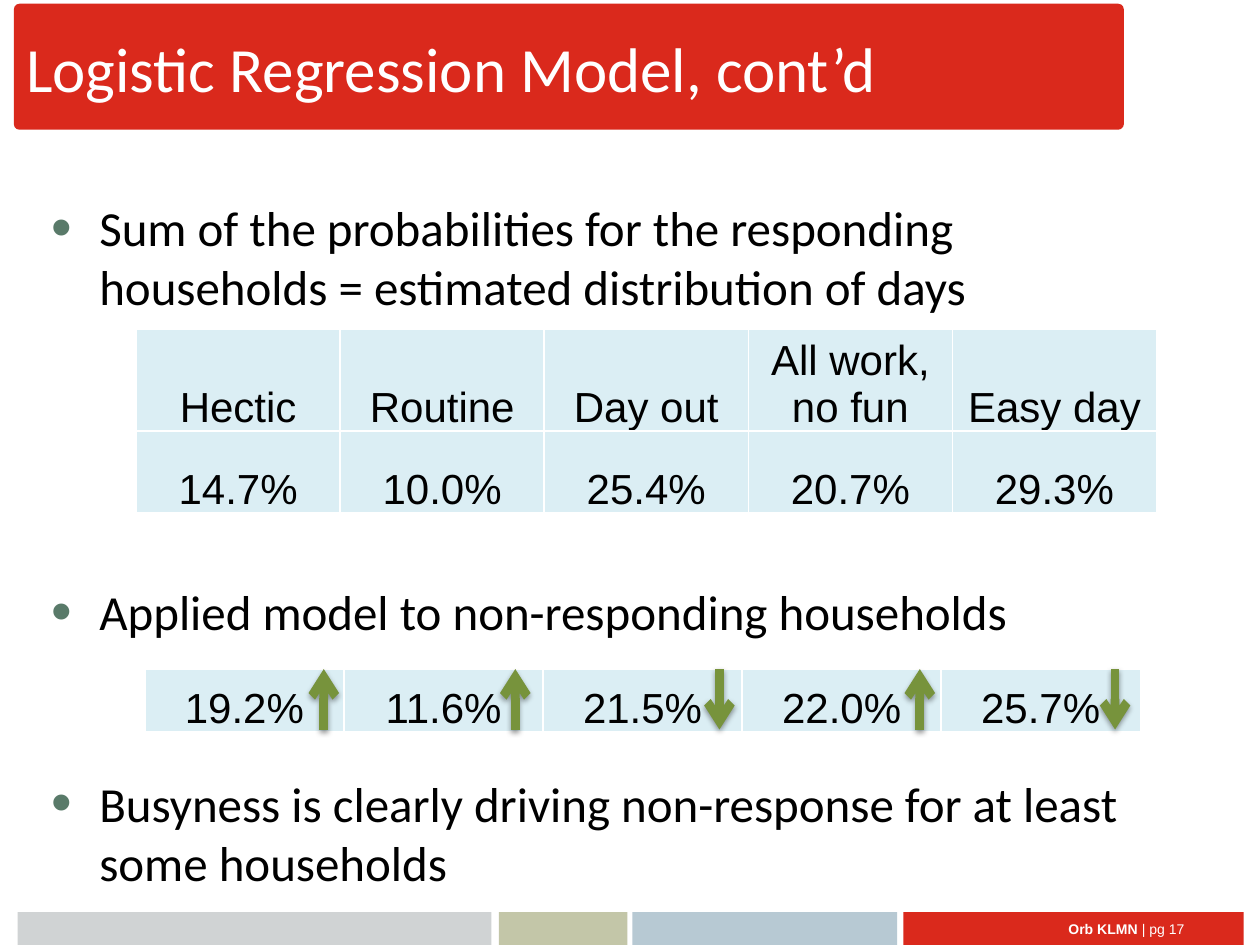
import pptx
import pptx.dml.color
import pptx.enum.shapes
import pptx.enum.text
import pptx.oxml
import pptx.oxml.ns
import pptx.util
from dataclasses import dataclass

Inches = pptx.util.Inches
Pt = pptx.util.Pt
ALIGN = pptx.enum.text.PP_ALIGN
ANCHOR = pptx.enum.text.MSO_ANCHOR
NAMESPACE = pptx.oxml.ns.nsdecls("a")


@dataclass(frozen=True)
class Theme:
    red: str = "DA291C"
    gray: str = "D0D3D4"
    olive: str = "C3C6A8"
    blue: str = "B7C9D3"
    cell: str = "DBEEF4"
    arrow: str = "77933C"
    bullet: str = "597A69"
    white: str = "FFFFFF"
    black: str = "000000"
    heading_font: str = "Calibri"
    table_font: str = "Arial"
    title_size: int = 36
    body_size: int = 28
    table_size: int = 24
    footer_size: int = 8


def rgb(value):
    return pptx.dml.color.RGBColor.from_string(value)


def element(xml):
    """Parse a drawing element whose tag is followed by a space or a slash."""
    end = min(i for i in (xml.find(" "), xml.find("/"), xml.find(">")) if i > 0)
    return pptx.oxml.parse_xml(f"{xml[:end]} {NAMESPACE}{xml[end:]}")


def write(paragraph, text, *, font, size, color, bold=False, align=None):
    """Add one formatted run to a paragraph."""
    run = paragraph.add_run()
    run.text = text
    run.font.name = font
    run.font.size = Pt(size)
    run.font.bold = bold
    run.font.color.rgb = rgb(color)
    if align is not None:
        paragraph.alignment = align


class SlideBuilder:
    def __init__(self, slide, theme):
        self.slide = slide
        self.theme = theme

    def bar(self, left, top, width, height, color, rounding=0):
        shape = self.slide.shapes.add_shape(
            pptx.enum.shapes.MSO_SHAPE.ROUNDED_RECTANGLE,
            Inches(left), Inches(top), Inches(width), Inches(height))
        shape.adjustments[0] = rounding
        shape.shadow.inherit = False
        shape.fill.solid()
        shape.fill.fore_color.rgb = rgb(color)
        shape.line.fill.background()

    def text_box(self, left, top, width, height, anchor=ANCHOR.MIDDLE):
        box = self.slide.shapes.add_textbox(
            Inches(left), Inches(top), Inches(width), Inches(height))
        box.text_frame.word_wrap = True
        box.text_frame.vertical_anchor = anchor
        return box.text_frame

    def bullets(self, left, top, width, height, items):
        """Items are pairs of text and space before, in points."""
        theme = self.theme
        frame = self.text_box(left, top, width, height, ANCHOR.TOP)
        for index, (text, space) in enumerate(items):
            paragraph = frame.add_paragraph() if index else frame.paragraphs[0]
            properties = paragraph._p.get_or_add_pPr()
            properties.set("marL", str(Inches(0.38)))
            properties.set("indent", str(-Inches(0.38)))
            for xml in (f'<a:buClr><a:srgbClr val="{theme.bullet}"/></a:buClr>',
                        '<a:buSzPct val="120000"/>',
                        '<a:buFont typeface="Arial"/>',
                        '<a:buChar char="•"/>'):
                properties.append(element(xml))
            if index:
                paragraph.space_before = Pt(space)
            write(paragraph, text, font=theme.heading_font,
                  size=theme.body_size, color=theme.black)

    def table(self, left, top, column_width, row_heights, rows):
        theme = self.theme
        columns = len(rows[0])
        table = self.slide.shapes.add_table(
            len(rows), columns, Inches(left), Inches(top),
            Inches(column_width * columns), Inches(sum(row_heights))).table
        for column in table.columns:
            column.width = Inches(column_width)
        for row, height, values in zip(table.rows, row_heights, rows):
            row.height = Inches(height)
            for cell, text in zip(row.cells, values):
                self.cell(cell, text)

    def cell(self, cell, text):
        theme = self.theme
        cell.margin_left = cell.margin_right = cell.margin_top = Inches(0.01)
        cell.margin_bottom = 0
        cell.vertical_anchor = ANCHOR.BOTTOM
        cell.fill.solid()
        cell.fill.fore_color.rgb = rgb(theme.cell)
        properties = cell._tc.get_or_add_tcPr()
        for index, side in enumerate(("lnL", "lnR", "lnT", "lnB")):
            properties.insert(index, element(
                f'<a:{side} w="{Pt(1)}"><a:solidFill>'
                f'<a:srgbClr val="{theme.white}"/></a:solidFill></a:{side}>'))
        write(cell.text_frame.paragraphs[0], text, font=theme.table_font,
              size=theme.table_size, color=theme.black, align=ALIGN.CENTER)

    def trend_arrow(self, x, top, bottom, rising):
        start, end = (bottom, top) if rising else (top, bottom)
        connector = self.slide.shapes.add_connector(
            pptx.enum.shapes.MSO_CONNECTOR.STRAIGHT,
            Inches(x), Inches(start), Inches(x), Inches(end))
        connector.line.color.rgb = rgb(self.theme.arrow)
        connector.line.width = Pt(5)
        connector.line._get_or_add_ln().append(element('<a:tailEnd type="arrow"/>'))
        connector._element.spPr.append(element(
            f'<a:effectLst><a:outerShdw blurRad="{Pt(3.1)}" dist="{Pt(1.6)}" '
            'dir="5400000" rotWithShape="0"><a:srgbClr val="000000">'
            '<a:alpha val="38000"/></a:srgbClr></a:outerShdw></a:effectLst>'))


def main():
    presentation = pptx.Presentation()
    presentation.slide_width = Inches(10)
    presentation.slide_height = Inches(7.5)
    theme = Theme()
    builder = SlideBuilder(
        presentation.slides.add_slide(presentation.slide_layouts[6]), theme)

    # Title banner
    builder.bar(0.11, 0.03, 8.81, 1, theme.red, rounding=0.045)
    title = builder.text_box(0.11, 0.03, 8.96, 1.01)
    write(title.paragraphs[0], "Logistic Regression Model, cont’d",
          font=theme.heading_font, size=theme.title_size, color=theme.white)

    # Footer bars and page number
    for left, width, color in ((0.14, 3.76, theme.gray), (3.96, 1.02, theme.olive),
                               (5.02, 2.1, theme.blue), (7.17, 2.7, theme.red)):
        builder.bar(left, 7.24, width, 0.26, color)
    footer = builder.text_box(7.17, 7.23, 2.33, 0.29).paragraphs[0]
    for text, bold in (("Orb KLMN ", True), ("| pg 17", False)):
        write(footer, text, font=theme.table_font, size=theme.footer_size,
              color=theme.white, bold=bold, align=ALIGN.RIGHT)

    # Body bullets, spaced to leave room for the tables
    builder.bullets(0.31, 1.52, 9.21, 5.57, [
        ("Sum of the probabilities for the responding households = "
         "estimated distribution of days", 0),
        ("Applied model to non-responding households", 152),
        ("Busyness is clearly driving non-response for at least some households", 76),
    ])

    # Estimated distributions of days
    builder.table(1.08, 2.61, 1.62, (0.81, 0.65), [
        ("Hectic", "Routine", "Day out", "All work, no fun", "Easy day"),
        ("14.7%", "10.0%", "25.4%", "20.7%", "29.3%"),
    ])
    builder.table(1.15, 5.31, 1.58, (0.5,),
                  [("19.2%", "11.6%", "21.5%", "22.0%", "25.7%")])

    # Direction of change for each kind of day
    for x, rising in ((2.57, True), (4.09, True), (5.71, False),
                      (7.3, True), (8.85, False)):
        builder.trend_arrow(x, 5.31, 5.79, rising)

    presentation.save("out.pptx")


if __name__ == "__main__":
    main()
